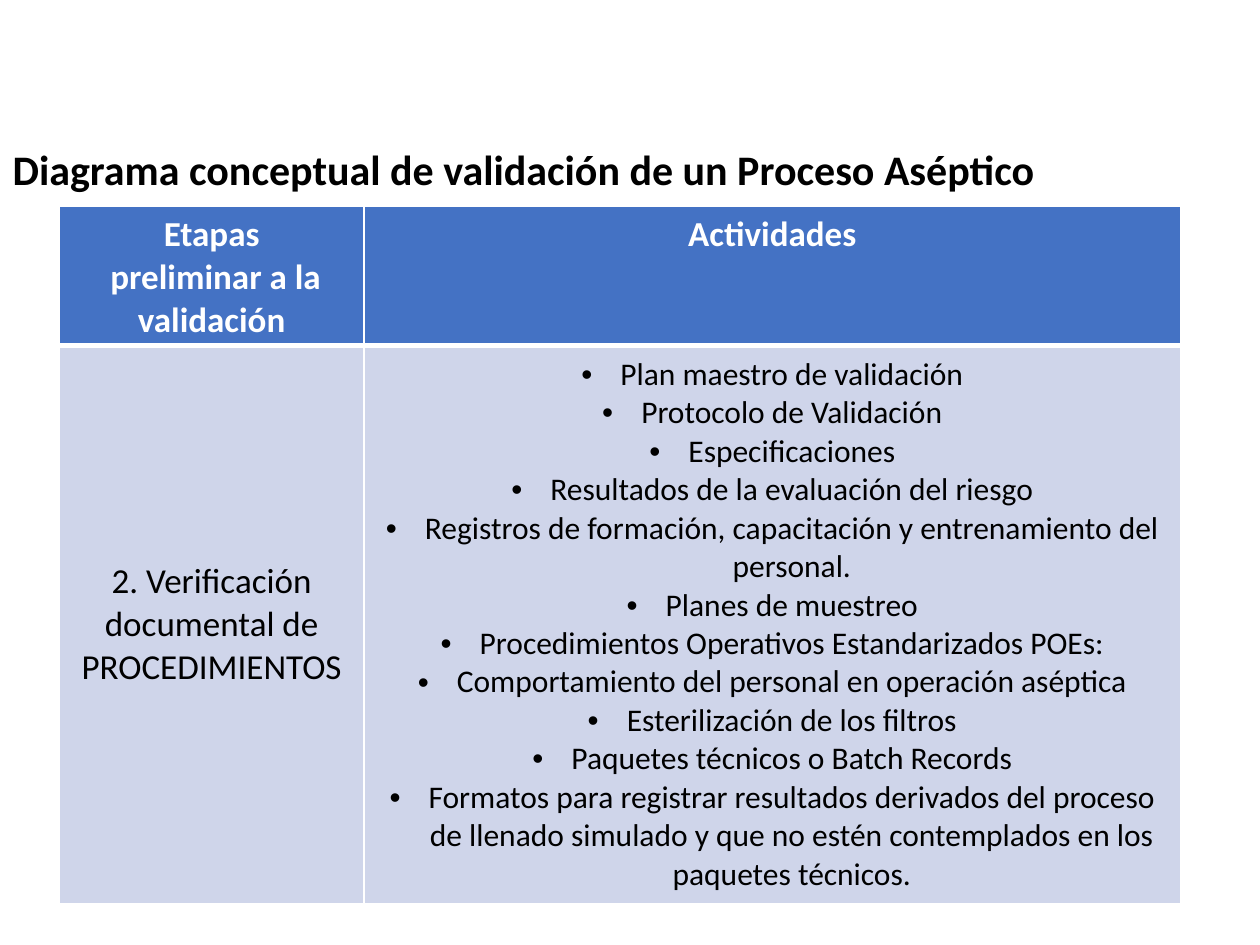
"""Build the slide on the preliminary stages of validating an aseptic process."""
from lxml.etree import SubElement
from pptx import Presentation
from pptx.dml.color import RGBColor
from pptx.enum.text import MSO_ANCHOR, MSO_AUTO_SIZE, PP_ALIGN
from pptx.oxml.ns import qn
from pptx.util import Inches, Pt

WHITE = RGBColor(0xFF, 0xFF, 0xFF)
BLACK = RGBColor(0x00, 0x00, 0x00)
BLUE = RGBColor(0x44, 0x72, 0xC4)
PALE_BLUE = RGBColor(0xCF, 0xD5, 0xEA)

TITLE = "Diagrama conceptual de validación de un Proceso Aséptico"
STAGE_HEADING = ["Etapas", " preliminar a la validación"]
ACTIVITY_HEADING = ["Actividades"]
STAGE = ["2. Verificación documental de PROCEDIMIENTOS"]
ACTIVITIES = [
    "Plan maestro de validación",
    "Protocolo de Validación",
    "Especificaciones",
    "Resultados de la evaluación del riesgo",
    "Registros de formación, capacitación y entrenamiento del personal.",
    "Planes de muestreo",
    "Procedimientos Operativos Estandarizados POEs:",
    "Comportamiento del personal en operación aséptica",
    "Esterilización de los filtros",
    "Paquetes técnicos o Batch Records",
    "Formatos para registrar resultados derivados del proceso de llenado "
    "simulado y que no estén contemplados en los paquetes técnicos.",
]
ROWS = [(STAGE_HEADING, ACTIVITY_HEADING), (STAGE, ACTIVITIES)]
COLUMN_WIDTHS = [2.42, 6.48]
ROW_HEIGHTS = [1, 4.43]
BULLET_INDENT = Inches(0.31)

HEADING_FONT = {"name": "Calibri", "size": Pt(20), "bold": True}
STAGE_FONT = {**HEADING_FONT, "bold": False}
ACTIVITY_FONT = {**STAGE_FONT, "size": Pt(18)}
TITLE_FONT = {**HEADING_FONT, "size": Pt(24)}


def format_font(font, values, color):
    for attribute, value in values.items():
        setattr(font, attribute, value)
    font.color.rgb = color


def add_bullet(paragraph):
    properties = paragraph._p.get_or_add_pPr()
    properties.set("marL", str(BULLET_INDENT))
    properties.set("indent", str(-BULLET_INDENT))
    SubElement(properties, qn("a:buFont"), typeface="Arial")
    SubElement(properties, qn("a:buChar"), char="•")


def add_borders(cell, widths):
    properties = cell._tc.get_or_add_tcPr()
    for side, width in widths.items():
        border = SubElement(properties, qn(f"a:ln{side}"), w=str(Pt(width)))
        fill = SubElement(border, qn("a:solidFill"))
        SubElement(fill, qn("a:srgbClr"), val=str(WHITE))


def fill_cell(cell, lines, is_heading, is_list):
    heading_rule = {"B": 3} if is_heading else {"T": 3}
    add_borders(cell, {"L": 1, "R": 1, "T": 1, "B": 1, **heading_rule})
    cell.fill.solid()
    cell.fill.fore_color.rgb = BLUE if is_heading else PALE_BLUE
    cell.vertical_anchor = MSO_ANCHOR.TOP if is_heading else MSO_ANCHOR.MIDDLE
    values = HEADING_FONT if is_heading else ACTIVITY_FONT if is_list else STAGE_FONT
    for index, line in enumerate(lines):
        paragraphs = cell.text_frame
        paragraph = paragraphs.add_paragraph() if index else paragraphs.paragraphs[0]
        paragraph.alignment = PP_ALIGN.CENTER
        if is_list:
            add_bullet(paragraph)
        run = paragraph.add_run()
        run.text = line
        format_font(run.font, values, WHITE if is_heading else BLACK)


def add_title(slide):
    title = slide.shapes.title
    title.left, title.top = Inches(0), Inches(1.09)
    title.width, title.height = Inches(8.55), Inches(0.5)
    frame = title.text_frame
    frame.text = TITLE
    frame.word_wrap = True
    frame.auto_size = MSO_AUTO_SIZE.SHAPE_TO_FIT_TEXT
    frame.vertical_anchor = MSO_ANCHOR.TOP
    heading = frame.paragraphs[0]
    heading.alignment = PP_ALIGN.LEFT
    format_font(heading.runs[0].font, TITLE_FONT, BLACK)


def add_stages(slide):
    stages = slide.shapes.add_table(
        len(ROWS), len(COLUMN_WIDTHS), Inches(0.47), Inches(1.64),
        Inches(sum(COLUMN_WIDTHS)), Inches(sum(ROW_HEIGHTS))).table
    for column, width in zip(stages.columns, COLUMN_WIDTHS):
        column.width = Inches(width)
    for row, height in zip(stages.rows, ROW_HEIGHTS):
        row.height = Inches(height)
    for row_index, row in enumerate(ROWS):
        for column_index, lines in enumerate(row):
            fill_cell(stages.cell(row_index, column_index), lines,
                      row_index == 0, lines is ACTIVITIES)


def main():
    deck = Presentation()
    deck.slide_width, deck.slide_height = Inches(10), Inches(7.5)
    slide = deck.slides.add_slide(deck.slide_layouts[5])
    add_title(slide)
    add_stages(slide)
    deck.save("out.pptx")


if __name__ == "__main__":
    main()
